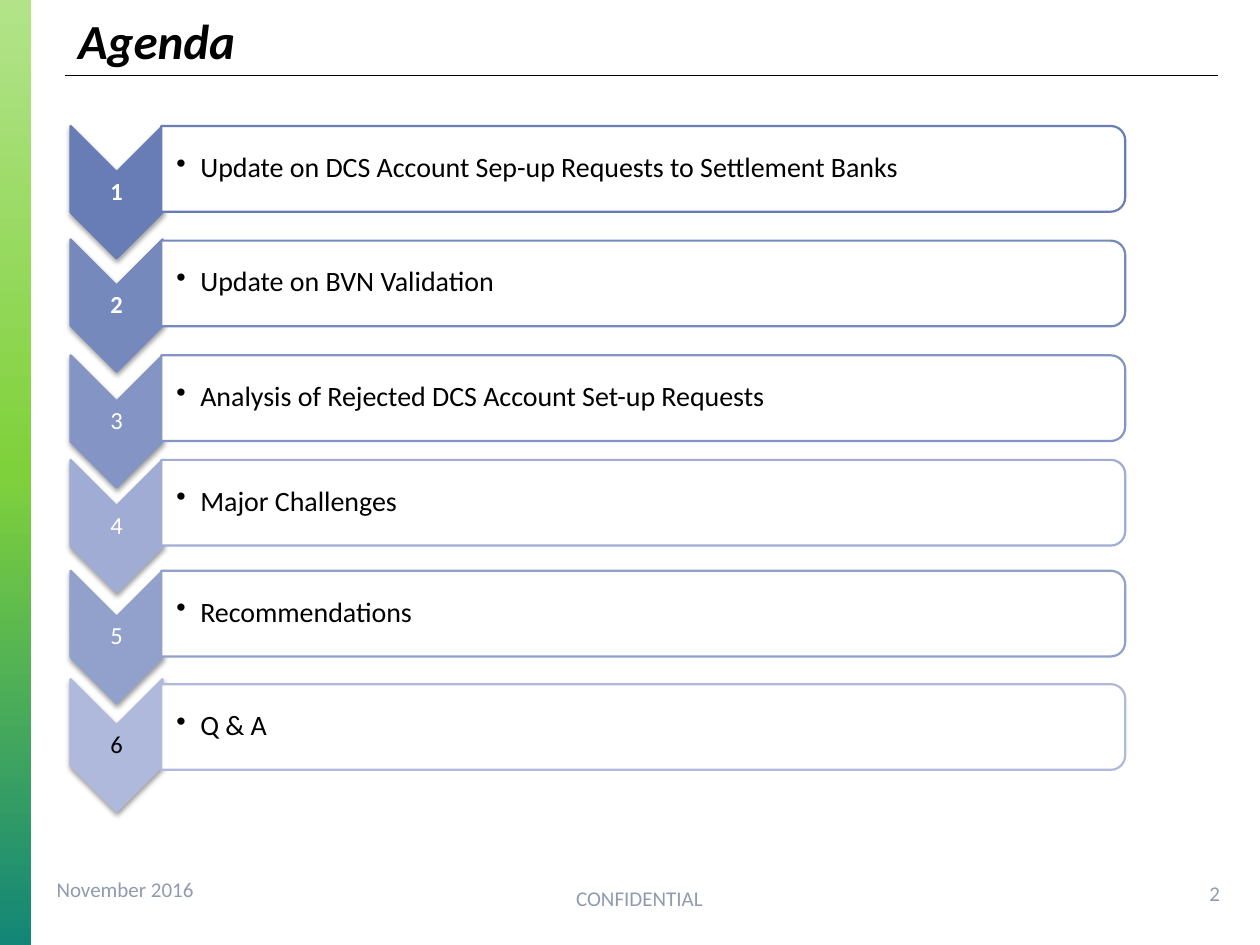
from copy import deepcopy

from lxml import etree
from pptx import Presentation
from pptx.dml.color import RGBColor
from pptx.enum.shapes import MSO_CONNECTOR, MSO_SHAPE
from pptx.enum.text import MSO_ANCHOR as Anchor, PP_ALIGN as Align
from pptx.oxml import parse_xml
from pptx.oxml.ns import nsdecls, qn
from pptx.util import Inches, Pt

FONT = "Calibri"
COLORS = {
    "black": "000000", "white": "FFFFFF", "footer": "8E9BB0",
    "band_top": "B2E389", "band_middle": "7FD13B", "band_bottom": "138677",
}
# Top of chevron, top of bar, colour, agenda item
AGENDA = [
    (1.0, 1.0, "687DB6", "Update on DCS Account Sep-up Requests to Settlement Banks"),
    (1.9, 1.91, "7689BD", "Update on BVN Validation"),
    (2.82, 2.82, "8494C5", "Analysis of Rejected DCS Account Set-up Requests"),
    (3.65, 3.65, "A0ACD4", "Major Challenges"),
    (4.53, 4.53, "92A0CC", "Recommendations"),
    (5.39, 5.43, "AEB9DB", "Q & A"),
]
CHEVRON_LEFT, CHEVRON_WIDTH, CHEVRON_HEIGHT = 0.56, 0.73, 1.05
BAR_LEFT, BAR_WIDTH, BAR_HEIGHT = 1.28, 7.65, 0.68


def rgb(value):
    return RGBColor.from_string(value)


def write_text(shape, text, size=12, color=COLORS["footer"], bold=False,
               italic=False, align=Align.LEFT, anchor=Anchor.MIDDLE,
               insets=(0.1, 0.05, 0.1, 0.05), spacing=None, bullet=False):
    frame = shape.text_frame
    frame.word_wrap = True
    frame.vertical_anchor = anchor
    (frame.margin_left, frame.margin_top,
     frame.margin_right, frame.margin_bottom) = map(Inches, insets)
    paragraph = frame.paragraphs[0]
    paragraph.alignment = align
    if spacing:
        paragraph.line_spacing = spacing
    run = paragraph.add_run()
    run.text = text
    font = run.font
    font.name, font.size, font.bold, font.italic = FONT, Pt(size), bold, italic
    font.color.rgb = rgb(color)
    if bullet:
        properties = paragraph._p.get_or_add_pPr()
        properties.set("marL", str(Inches(0.19)))
        properties.set("indent", str(-Inches(0.19)))
        etree.SubElement(properties, qn("a:buChar")).set("char", "•")


def add_text(slide, box, text, **text_format):
    write_text(slide.shapes.add_textbox(*map(Inches, box)), text, **text_format)


def add_turned_shape(slide, preset, box, fill, line):
    """Add a shape turned a quarter clockwise that appears in the given box."""
    left, top, width, height = box
    shift = (width - height) / 2
    shape = slide.shapes.add_shape(
        preset, *map(Inches, (left + shift, top - shift, height, width)))
    shape.rotation = 90
    shape.shadow.inherit = False
    shape.fill.solid()
    shape.fill.fore_color.rgb = rgb(fill)
    shape.line.color.rgb = rgb(line)
    shape.line.width = Pt(1.25)
    return shape


def add_soft_shadow(shape):
    effects = shape._element.spPr.find(qn("a:effectLst"))
    effects.append(parse_xml(
        f'<a:outerShdw {nsdecls("a")} blurRad="{Pt(3.1)}" dist="{Pt(1.6)}" '
        'dir="5400000" rotWithShape="0"><a:srgbClr val="000000">'
        '<a:alpha val="38000"/></a:srgbClr></a:outerShdw>'))


def add_side_band(slide, box):
    band = slide.shapes.add_shape(MSO_SHAPE.RECTANGLE, *map(Inches, box))
    band.shadow.inherit = False
    band.line.fill.background()
    band.fill.gradient()
    band.fill.gradient_angle = 270
    first_stop = band._element.spPr.find(".//" + qn("a:gs"))
    first_stop.addnext(deepcopy(first_stop))
    names = ("band_top", "band_middle", "band_bottom")
    for index, (stop, name) in enumerate(zip(band.fill.gradient_stops, names)):
        stop.position = index / 2
        stop.color.rgb = rgb(COLORS[name])


def add_header(slide, box, text):
    left, top, width, height = box
    title = slide.shapes.title
    title.left, title.top, title.width, title.height = map(Inches, box)
    write_text(title, text, size=28, color=COLORS["black"], bold=True,
               italic=True, anchor=Anchor.TOP)
    bottom = top + height
    rule = slide.shapes.add_connector(
        MSO_CONNECTOR.STRAIGHT,
        *map(Inches, (left, bottom, left + width, bottom)))
    rule.line.color.rgb = rgb(COLORS["black"])
    rule.line.width = Pt(0.25)
    etree.SubElement(rule._element.spPr, qn("a:effectLst"))


def add_chevron(slide, box, number, color, text_color, bold):
    left, top, width, height = box
    chevron = add_turned_shape(slide, MSO_SHAPE.CHEVRON, box, color, color)
    add_soft_shadow(chevron)
    add_text(slide, (left, top + 0.37, width, 0.31), str(number), size=14,
             color=text_color, bold=bold, align=Align.CENTER, spacing=0.9,
             insets=(0.01,) * 4)


def add_bar(slide, box, text, color):
    left, top, width, height = box
    add_turned_shape(slide, MSO_SHAPE.ROUND_2_SAME_RECTANGLE, box,
                     COLORS["white"], color)
    add_text(slide, (left, top + 0.03, width - 0.03, height - 0.07), text,
             size=16, color=COLORS["black"], spacing=0.9, bullet=True,
             insets=(0.12, 0.01, 0.01, 0.01))


def add_agenda(slide):
    for number, (chevron_top, bar_top, color, text) in enumerate(AGENDA, 1):
        text_color = COLORS["black" if number == len(AGENDA) else "white"]
        add_chevron(slide,
                    (CHEVRON_LEFT, chevron_top, CHEVRON_WIDTH, CHEVRON_HEIGHT),
                    number, color, text_color, bold=number <= 2)
        add_bar(slide, (BAR_LEFT, bar_top, BAR_WIDTH, BAR_HEIGHT), text, color)


def add_footer(slide):
    add_text(slide, (0.35, 6.83, 4.09, 0.45), "November 2016")
    add_text(slide, (3.03, 6.9, 4.09, 0.45), "CONFIDENTIAL", align=Align.CENTER)
    add_text(slide, (9.5, 6.89, 0.42, 0.4), "2")


def main():
    presentation = Presentation()
    presentation.slide_width, presentation.slide_height = Inches(10), Inches(7.5)
    slide = presentation.slides.add_slide(presentation.slide_layouts[5])
    add_side_band(slide, (0, 0, 0.25, 7.5))
    add_header(slide, (0.52, 0.03, 9.15, 0.57), "Agenda")
    add_agenda(slide)
    add_footer(slide)
    presentation.save("out.pptx")


if __name__ == "__main__":
    main()
